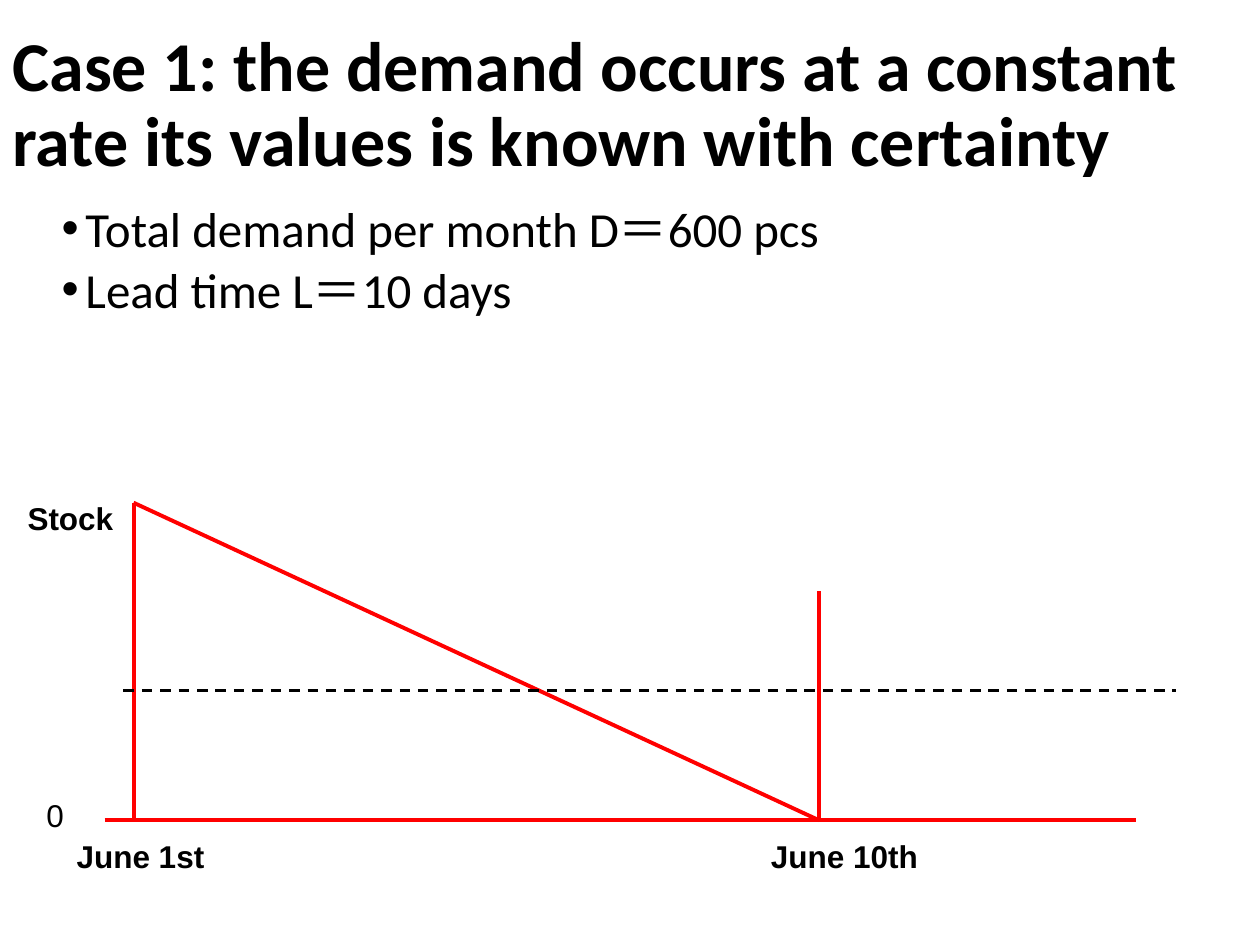
from dataclasses import dataclass

from lxml.etree import SubElement
from pptx import Presentation
from pptx.dml.color import RGBColor
from pptx.enum.dml import MSO_LINE_DASH_STYLE as Dash
from pptx.enum.shapes import MSO_CONNECTOR as Connector
from pptx.enum.text import MSO_ANCHOR as Anchor, MSO_AUTO_SIZE as AutoSize, PP_ALIGN as Align
from pptx.oxml.ns import qn
from pptx.util import Inches, Pt


@dataclass(frozen=True)
class Theme:
    ink: str = "000000"
    stock: str = "FF0000"
    heading_font: str = "Calibri"
    label_font: str = "Arial"
    title_size: float = 40
    body_size: float = 28
    label_size: float = 18
    stock_width: float = 2.25
    level_width: float = 1.5


def write(para, text, *, font, size, color, bold=False, spacing=1.0, before=0):
    """Put one formatted run of text in a paragraph."""
    para.alignment = Align.LEFT
    para.line_spacing = spacing
    para.space_before = Pt(before)
    span = para.add_run()
    span.text = text
    span.font.name = font
    span.font.size = Pt(size)
    span.font.bold = bold
    span.font.color.rgb = RGBColor.from_string(color)


def add_bullet(para, indent):
    props = para._p.get_or_add_pPr()
    props.set("marL", str(Inches(indent)))
    props.set("indent", str(-Inches(indent)))
    SubElement(props, qn("a:buFont")).set("typeface", "Arial")
    SubElement(props, qn("a:buChar")).set("char", "•")


class SlideBuilder:
    def __init__(self, slide, theme):
        self.slide = slide
        self.theme = theme

    def title(self, text, left, top, width, height):
        box = self.slide.shapes.title
        box.left, box.top, box.width, box.height = map(Inches, (left, top, width, height))
        frame = box.text_frame
        frame.word_wrap = True
        frame.auto_size = AutoSize.NONE
        frame.vertical_anchor = Anchor.MIDDLE
        write(frame.paragraphs[0], text, font=self.theme.heading_font,
              size=self.theme.title_size, color=self.theme.ink, bold=True, spacing=0.9)

    def text_box(self, left, top, width, height, wrap=True):
        box = self.slide.shapes.add_textbox(*map(Inches, (left, top, width, height)))
        box.text_frame.word_wrap = wrap
        return box.text_frame

    def bullets(self, items, left, top, width, height):
        frame = self.text_box(left, top, width, height)
        for index, item in enumerate(items):
            para = frame.add_paragraph() if index else frame.paragraphs[0]
            write(para, item, font=self.theme.heading_font, size=self.theme.body_size,
                  color=self.theme.ink, spacing=0.8, before=7.5)
            add_bullet(para, 0.19)

    def label(self, text, left, top, width, bold=True):
        frame = self.text_box(left, top, width, 0.4, wrap=False)
        frame.auto_size = AutoSize.SHAPE_TO_FIT_TEXT
        write(frame.paragraphs[0], text, font=self.theme.label_font,
              size=self.theme.label_size, color=self.theme.ink, bold=bold)

    def line(self, start, end, color, width, dash=None):
        line = self.slide.shapes.add_connector(
            Connector.STRAIGHT, *map(Inches, (*start, *end)))
        line.line.color.rgb = RGBColor.from_string(color)
        line.line.width = Pt(width)
        if dash:
            line.line.dash_style = dash
        SubElement(line._element.spPr, qn("a:effectLst"))


def main():
    theme = Theme()
    deck = Presentation()
    deck.slide_width, deck.slide_height = Inches(10), Inches(7.5)
    page = SlideBuilder(deck.slides.add_slide(deck.slide_layouts[5]), theme)

    # Heading and given values
    page.title("Case 1: the demand occurs at a constant rate its values is known with certainty",
               0, 0.12, 10, 1.45)
    page.bullets(["Total demand per month D＝600 pcs", "Lead time L＝10 days"],
                 0.39, 1.62, 9, 2.68)

    # Stock diagram: time axis, stock axis, delivery day, falling stock
    first_day, tenth_day = 1.06, 6.5
    full_stock, zero_stock = 3.99, 6.51
    for start, end in (
        ((0.83, zero_stock), (9.02, zero_stock)),
        ((first_day, zero_stock), (first_day, full_stock)),
        ((tenth_day, zero_stock), (tenth_day, 4.69)),
        ((first_day, full_stock), (tenth_day, zero_stock)),
    ):
        page.line(start, end, theme.stock, theme.stock_width)

    # Axis labels
    date_top = 6.59
    page.label("June 1st", 0.51, date_top, 1.23)
    page.label("June 10th", 6.02, date_top, 1.38)
    page.label("Stock", 0.12, 3.91, 0.89)

    # Dashed stock level and the zero mark
    page.line((0.98, 5.48), (9.33, 5.48), theme.ink, theme.level_width, Dash.DASH)
    page.label("0", 0.27, 6.27, 0.34, bold=False)

    deck.save("out.pptx")


if __name__ == "__main__":
    main()
